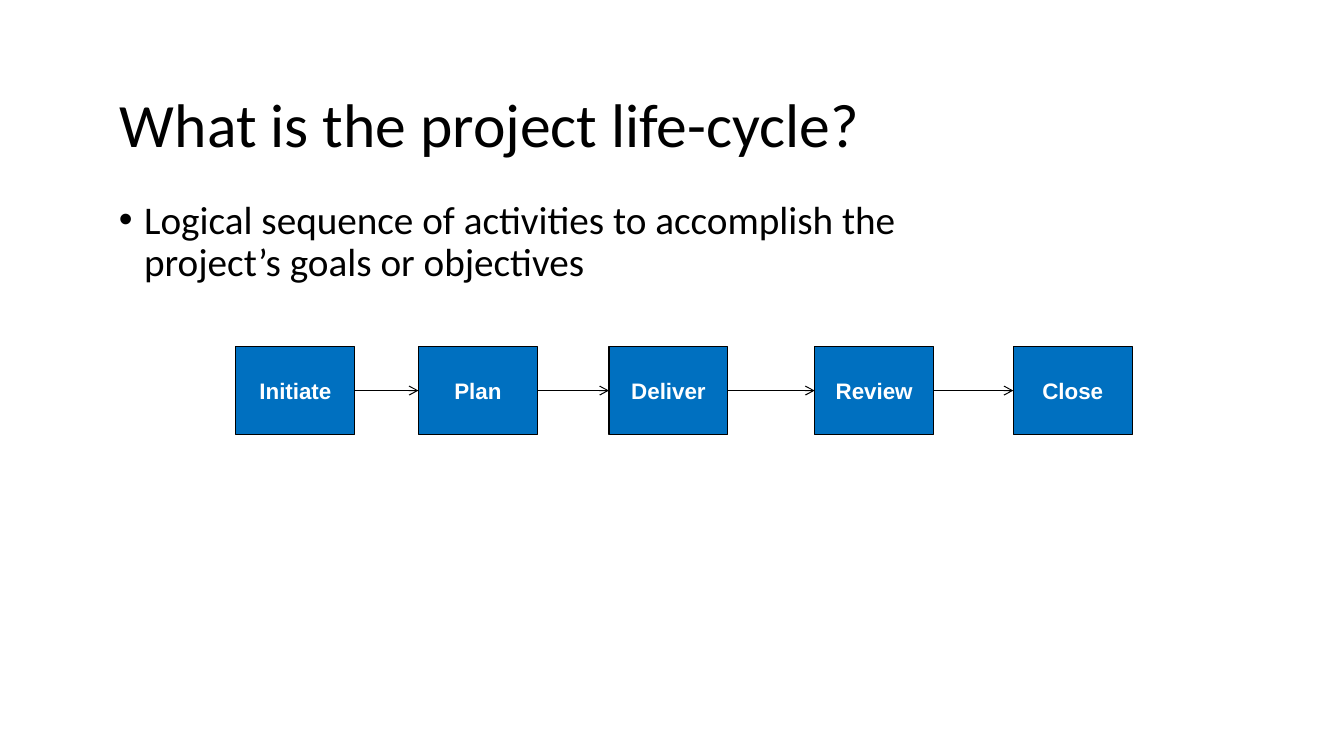
"""Build the project life-cycle slide."""
from itertools import pairwise

from lxml import etree
from pptx import Presentation
from pptx.dml.color import RGBColor
from pptx.enum import shapes, text
from pptx.oxml import ns
from pptx.util import Inches, Pt

BLACK = RGBColor(0x00, 0x00, 0x00)
BLUE = RGBColor(0x00, 0x70, 0xC0)
WHITE = RGBColor(0xFF, 0xFF, 0xFF)

STAGES = [("Initiate", 2.34), ("Plan", 4.15), ("Deliver", 6.04),
          ("Review", 8.08), ("Close", 10.05)]
TOP, WIDTH, HEIGHT = 3.44, 1.18, 0.87


def add_run(para, words, font, size, color, bold=False):
    """Add one formatted run to a paragraph."""
    run = para.add_run()
    run.text = words
    run.font.name = font
    run.font.size = Pt(size)
    run.font.color.rgb = color
    run.font.bold = bold


def fill_holder(holder, area, words, size, anchor):
    """Place a placeholder, write its text and return the paragraph."""
    holder.left, holder.top, holder.width, holder.height = map(Inches, area)
    frame = holder.text_frame
    frame.word_wrap = True
    frame.auto_size = text.MSO_AUTO_SIZE.NONE
    frame.vertical_anchor = anchor
    para = frame.paragraphs[0]
    para.alignment = text.PP_ALIGN.LEFT
    para.line_spacing = 0.9
    para.space_before = Pt(0)
    add_run(para, words, "Calibri", size, BLACK)
    return para


def add_bullet(para):
    """Give a paragraph a round bullet with a hanging indent."""
    props = para._p.get_or_add_pPr()
    props.set("marL", str(Inches(0.25)))
    props.set("indent", str(-Inches(0.25)))
    etree.SubElement(props, ns.qn("a:buFont"), typeface="Arial")
    etree.SubElement(props, ns.qn("a:buChar"), char="•")


def add_stage(slide, name, left):
    """Draw one stage box."""
    box = slide.shapes.add_shape(
        shapes.MSO_SHAPE.RECTANGLE,
        Inches(left), Inches(TOP), Inches(WIDTH), Inches(HEIGHT))
    box.shadow.inherit = False
    box.fill.solid()
    box.fill.fore_color.rgb = BLUE
    box.line.color.rgb = BLACK
    box.line.width = Pt(0.75)
    frame = box.text_frame
    frame.vertical_anchor = text.MSO_ANCHOR.MIDDLE
    para = frame.paragraphs[0]
    para.alignment = text.PP_ALIGN.CENTER
    add_run(para, name, "Arial", 16, WHITE, True)
    return box


def add_arrow(slide, start, end):
    """Join the right side of one box to the left side of the next."""
    arrow = slide.shapes.add_connector(
        shapes.MSO_CONNECTOR.STRAIGHT, 0, 0, 0, 0)
    arrow.begin_connect(start, 3)
    arrow.end_connect(end, 1)
    arrow.line.color.rgb = BLACK
    arrow.line.width = Pt(0.75)
    etree.SubElement(arrow.line._get_or_add_ln(), ns.qn("a:tailEnd"),
                     type="arrow")
    etree.SubElement(arrow._element.spPr, ns.qn("a:effectLst"))


def main():
    """Create and save the slide."""
    deck = Presentation()
    deck.slide_width, deck.slide_height = Inches(13.33), Inches(7.5)
    slide = deck.slides.add_slide(deck.slide_layouts[1])
    fill_holder(slide.shapes.title, (1.09, 0.64, 7.58, 1.25),
                "What is the project life-cycle?", 44,
                text.MSO_ANCHOR.MIDDLE)
    point = fill_holder(
        slide.placeholders[1], (1.08, 1.94, 8.5, 4.73),
        "Logical sequence of activities to accomplish the "
        "project’s goals or objectives", 28, text.MSO_ANCHOR.TOP)
    add_bullet(point)
    boxes = [add_stage(slide, name, left) for name, left in STAGES]
    for start, end in pairwise(boxes):
        add_arrow(slide, start, end)
    deck.save("out.pptx")


if __name__ == "__main__":
    main()
